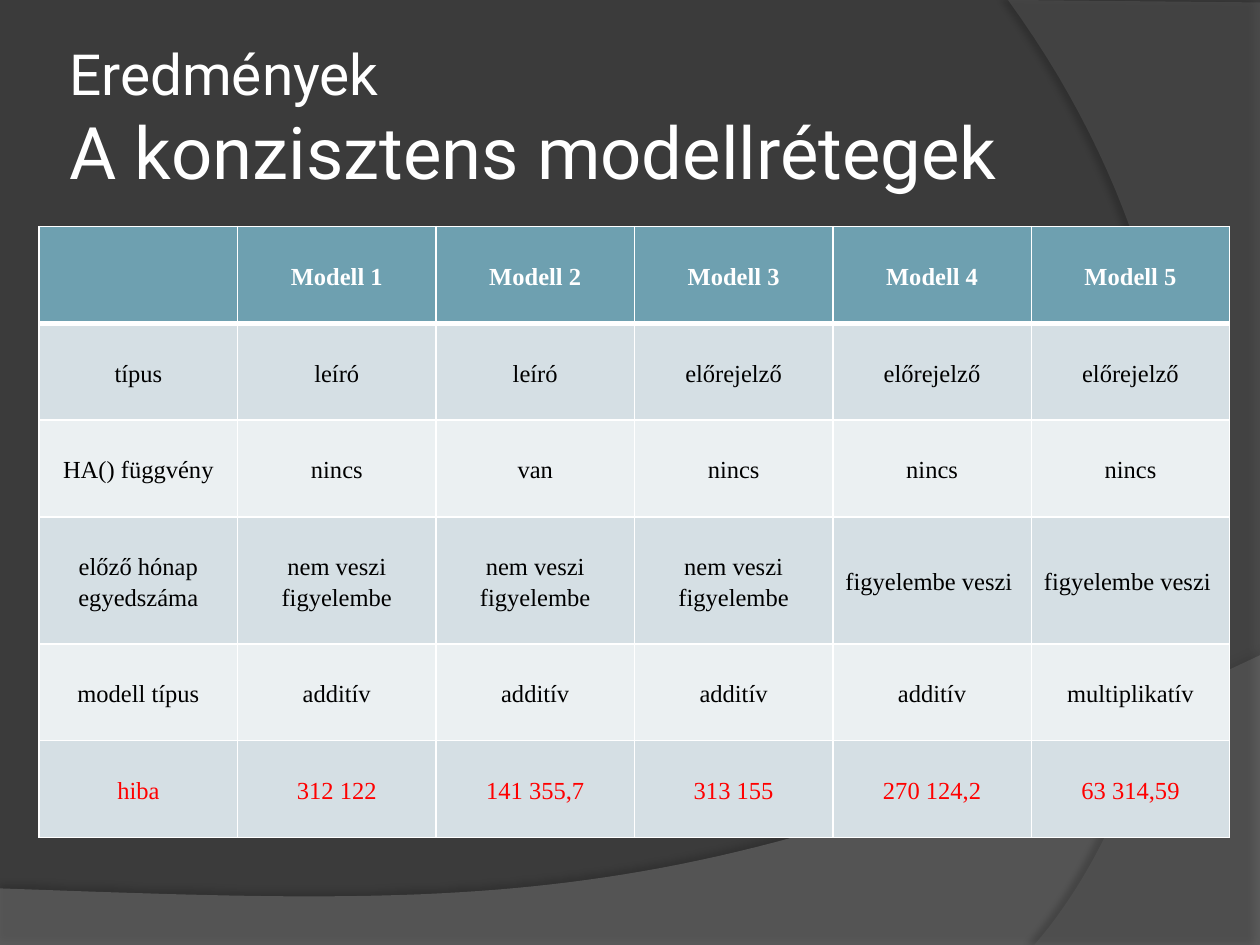
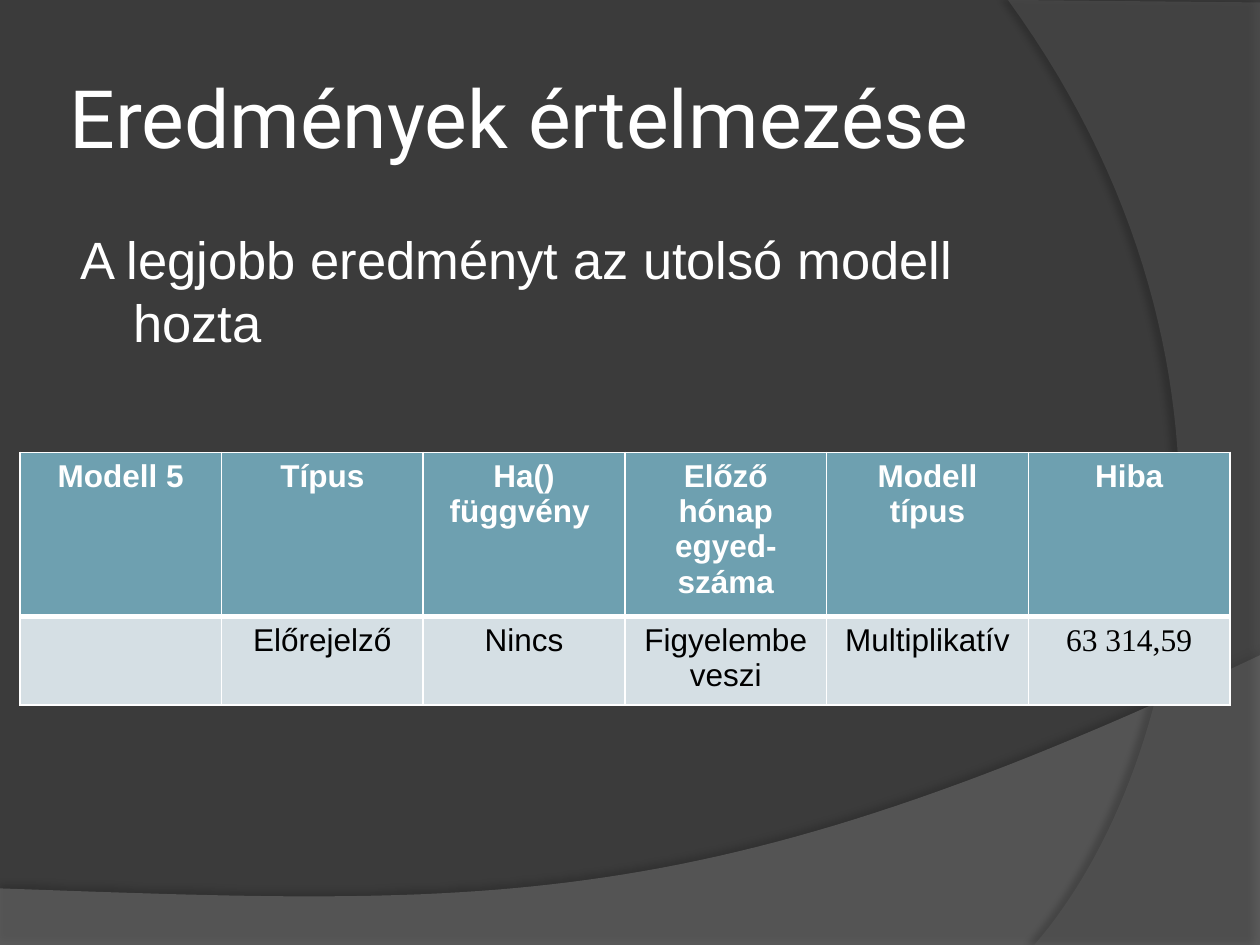
import pptx
import pptx.dml.color
import pptx.enum.text
import pptx.oxml
import pptx.oxml.ns
import pptx.util
from pptx.dml.color import RGBColor
from pptx.util import Cm

BACKDROP = RGBColor(0x3B, 0x3B, 0x3B)
WAVE_GREY = RGBColor(0x7F, 0x7F, 0x7F)
ARC_GREY = RGBColor(0x5E, 0x5E, 0x5E)
WHITE = RGBColor(0xFF, 0xFF, 0xFF)
BLACK = RGBColor(0, 0, 0)
RED = RGBColor(0xFF, 0, 0)
HEADER_TEAL = RGBColor(0x6E, 0xA0, 0xB0)
BAND_DARK = RGBColor(0xD5, 0xDF, 0xE4)
BAND_LIGHT = RGBColor(0xEB, 0xF0, 0xF2)

TITLE_FONT, BODY_FONT, TABLE_FONT = "Roboto", "Arial", "Times New Roman"
CENTER = pptx.enum.text.PP_ALIGN.CENTER
MIDDLE = pptx.enum.text.MSO_ANCHOR.MIDDLE
TOP = pptx.enum.text.MSO_ANCHOR.TOP
NAMESPACE = pptx.oxml.ns.nsdecls("a")

# Background sweeps: corners in cm, then a Bézier curve from the last corner
# (two control points and an end), fill, opacity %, shadow opacity %,
# shadow distance in pt, shadow angle
SWEEPS = [
    ([(0, 17.91), (0, 19.05), (25.4, 19.05), (25.4, 13.21)],
     [(14.2, 18.52), (9.93, 18.26), (0, 17.91)], WAVE_GREY, 45, 35, 3.5, 270),
    ([(25.4, 0.05), (25.4, 19.05), (20.85, 19.05)],
     [(23.75, 15.72), (25.86, 7.62), (20.32, 0)], ARC_GREY, 40, 45, 4, 180),
]
CURVE_STEPS = 60

TITLES = [
    [("Eredmények", 32.4), ("A konzisztens modellrétegek", 41.4)],
    [("Eredmények értelmezése", 46)],
]

MODEL_ROWS = [
    [""] + [f"Modell {number}" for number in range(1, 6)],
    ["típus"] + ["leíró"] * 2 + ["előrejelző"] * 3,
    ["HA() függvény", "nincs", "van"] + ["nincs"] * 3,
    ["előző hónap egyedszáma"] + ["nem veszi figyelembe"] * 3 + ["figyelembe veszi "] * 2,
    ["modell típus"] + ["additív"] * 4 + ["multiplikatív"],
    ["hiba", "312 122", "141 355,7", "313 155", "270 124,2", "63 314,59"],
]
BEST_MODEL_ROWS = [
    ["Modell 5", "Típus", "Ha() függvény ", "Előző hónap egyed-száma", "Modell típus", "Hiba"],
    ["", "Előrejelző", "Nincs", "Figyelembe veszi", "Multiplikatív", "63 314,59"],
]
# Rows, left, top, width, row heights (cm), font, size, line spacing,
# side margin, top margin, anchor
TABLES = [
    (MODEL_ROWS, 0.79, 4.57, 24, [1.95, 1.95, 1.95, 2.56, 1.95, 1.95],
     TABLE_FONT, 14, 1.15, 0.13, 0, MIDDLE),
    (BEST_MODEL_ROWS, 0.4, 9.12, 24.4, [2.95, 1.78],
     BODY_FONT, 18, 1.0, 0.25, 0.13, TOP),
]


def add_run(paragraph, text, font, size, color, bold=False):
    run = paragraph.add_run()
    run.text = text
    run.font.name = font
    run.font.size = pptx.util.Pt(size)
    run.font.color.rgb = color
    run.font.bold = bold


def add_border(cell, side, width):
    cell._tc.get_or_add_tcPr().append(pptx.oxml.parse_xml(
        f'<a:ln{side} {NAMESPACE} w="{pptx.util.Pt(width)}"><a:solidFill>'
        f'<a:srgbClr val="{WHITE}"/></a:solidFill></a:ln{side}>'))


deck = pptx.Presentation()
deck.slide_width, deck.slide_height = Cm(25.4), Cm(19.05)

for title_lines, table_plan in zip(TITLES, TABLES):
    slide = deck.slides.add_slide(deck.slide_layouts[6])
    slide.background.fill.solid()
    slide.background.fill.fore_color.rgb = BACKDROP

    # Background sweeps
    for corners, curve, grey, opacity, shade, distance, angle in SWEEPS:
        outline = list(corners)
        bezier = [corners[-1]] + curve
        for step in range(1, CURVE_STEPS + 1):
            t = step / CURVE_STEPS
            weights = [(1 - t) ** 3, 3 * t * (1 - t) ** 2, 3 * t * t * (1 - t), t ** 3]
            outline.append(tuple(sum(w * point[axis] for w, point in zip(weights, bezier))
                                 for axis in (0, 1)))
        points = [(Cm(x), Cm(y)) for x, y in outline]
        builder = slide.shapes.build_freeform(*points[0])
        builder.add_line_segments(points[1:], close=True)
        sweep = builder.convert_to_shape()
        sweep.fill.solid()
        sweep.fill.fore_color.rgb = grey
        sweep.line.fill.background()
        sweep.shadow.inherit = False
        properties = sweep._element.spPr
        fill_color = properties.find(".//" + pptx.oxml.ns.qn("a:srgbClr"))
        fill_color.append(pptx.oxml.parse_xml(f'<a:alpha {NAMESPACE} val="{opacity * 1000}"/>'))
        properties.find(pptx.oxml.ns.qn("a:effectLst")).append(pptx.oxml.parse_xml(
            f'<a:outerShdw {NAMESPACE} blurRad="{pptx.util.Pt(4)}" '
            f'dist="{pptx.util.Pt(distance)}" dir="{angle * 60000}" rotWithShape="0">'
            f'<a:srgbClr val="{BLACK}"><a:alpha val="{shade * 1000}"/></a:srgbClr></a:outerShdw>'))

    # Title
    title = slide.shapes.add_textbox(Cm(1.27), Cm(0.76), Cm(20.75), Cm(3.18)).text_frame
    title.word_wrap = True
    title.vertical_anchor = MIDDLE
    title.margin_left = title.margin_right = Cm(0.13)
    for index, (line, size) in enumerate(title_lines):
        if index:
            title.paragraphs[0].add_line_break()
        add_run(title.paragraphs[0], line, TITLE_FONT, size, WHITE)

    # Conclusion above the best model's table
    if table_plan[0] is BEST_MODEL_ROWS:
        conclusion = slide.shapes.add_textbox(Cm(1.27), Cm(4.45), Cm(20.75), Cm(12.57)).text_frame
        conclusion.word_wrap = True
        sentence = conclusion.paragraphs[0]
        sentence.space_before = pptx.util.Pt(6)
        hanging = sentence._p.get_or_add_pPr()
        hanging.set("marL", str(Cm(1.17)))
        hanging.set("indent", str(Cm(-1.07)))
        add_run(sentence, "A legjobb eredményt az utolsó modell hozta", BODY_FONT, 30, WHITE)

    # Model table
    rows, left, top, width, heights, font, size, spacing, side_margin, top_margin, anchor = table_plan
    models = slide.shapes.add_table(len(rows), len(rows[0]), Cm(left), Cm(top),
                                    Cm(width), Cm(sum(heights))).table
    models.horz_banding = False
    for row_index, (labels, height) in enumerate(zip(rows, heights)):
        models.rows[row_index].height = Cm(height)
        for column, label in enumerate(labels):
            cell = models.cell(row_index, column)
            cell.vertical_anchor = anchor
            cell.margin_left = cell.margin_right = Cm(side_margin)
            cell.margin_top = cell.margin_bottom = Cm(top_margin)
            for side in "LRTB":
                under_header = (row_index, side) in ((0, "B"), (1, "T"))
                add_border(cell, side, 3 if under_header else 1)
            cell.fill.solid()
            if row_index == 0:
                cell.fill.fore_color.rgb, ink = HEADER_TEAL, WHITE
            else:
                cell.fill.fore_color.rgb = BAND_DARK if row_index % 2 else BAND_LIGHT
                ink = RED if labels[0] == "hiba" else BLACK
            paragraph = cell.text_frame.paragraphs[0]
            paragraph.alignment = CENTER
            paragraph.line_spacing = spacing
            if label:
                label_font = TABLE_FONT if label == "63 314,59" else font
                add_run(paragraph, label, label_font, size, ink, bold=row_index == 0)

deck.save("out.pptx")
